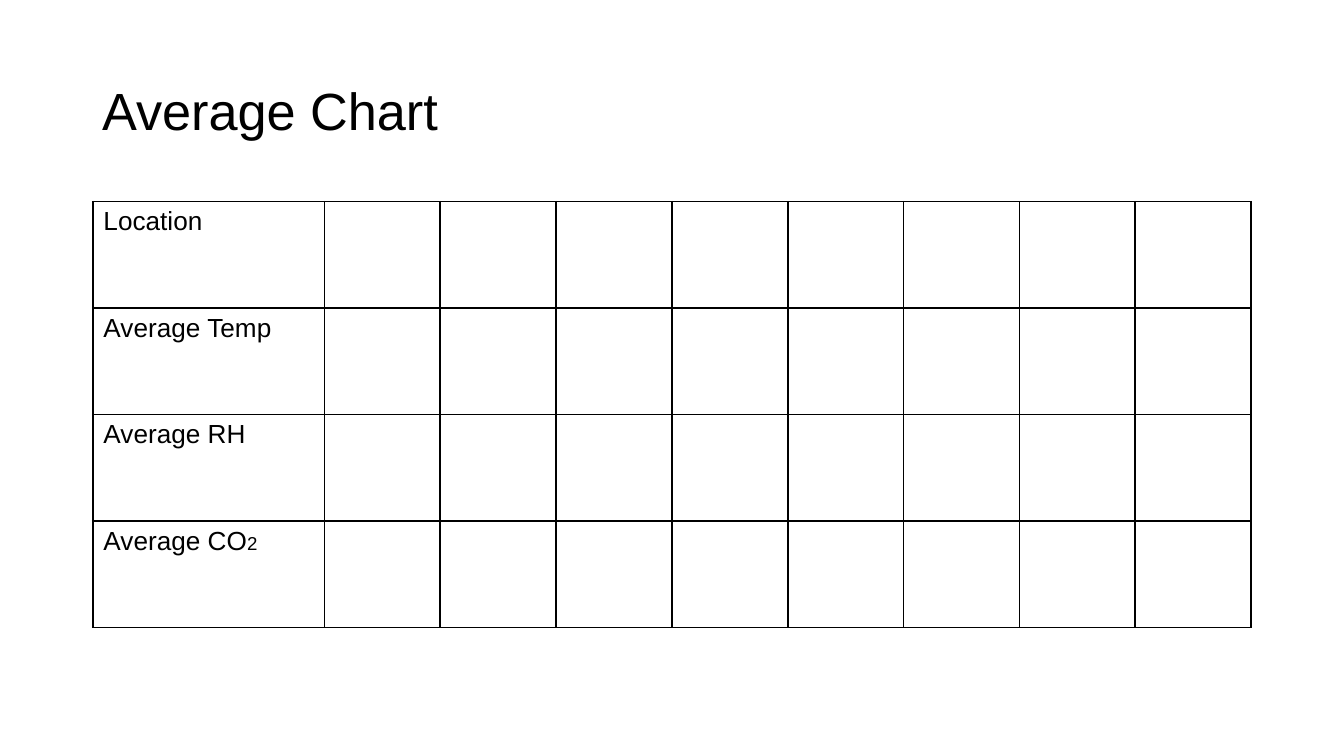
"""Build the Average Chart slide: a title above an empty table of readings."""
from lxml import etree
from pptx import Presentation
from pptx.dml.color import RGBColor
from pptx.enum.text import MSO_ANCHOR
from pptx.oxml.ns import qn
from pptx.util import Inches, Pt

MIDDLE = MSO_ANCHOR.MIDDLE
COLORS = {"ink": "000000", "paper": "FFFFFF"}
FONT = "Arial"
ROW_LABELS = [
    [("Location", 14)],
    [("Average Temp", 14)],
    [("Average RH", 14)],
    [("Average CO", 14), ("2", 10)],
]
COLUMN_SHARES = [2] + [1] * 8
LEFT, WIDTH = Inches(0.69), Inches(8.62)
TABLE_HEIGHT = Inches(3.17)


def add_run(paragraph, text, size):
    run = paragraph.add_run()
    run.text = text
    run.font.name = FONT
    run.font.size = Pt(size)
    run.font.color.rgb = RGBColor.from_string(COLORS["ink"])


def add_borders(cell):
    properties = cell._tc.get_or_add_tcPr()
    for position, side in enumerate(("a:lnL", "a:lnR", "a:lnT", "a:lnB")):
        border = etree.Element(qn(side), w=str(Pt(1)))
        fill = etree.SubElement(border, qn("a:solidFill"))
        etree.SubElement(fill, qn("a:srgbClr"), val=COLORS["ink"])
        properties.insert(position, border)


prs = Presentation()
prs.slide_width = Inches(10)
prs.slide_height = Inches(10 * 9 / 16)
slide = prs.slides.add_slide(prs.slide_layouts[6])
slide.background.fill.solid()
slide.background.fill.fore_color.rgb = RGBColor.from_string(COLORS["paper"])

title = slide.shapes.add_textbox(LEFT, Inches(0.3), WIDTH, Inches(1.09)).text_frame
title.word_wrap = True
title.vertical_anchor = MIDDLE
title.margin_left = title.margin_right = Inches(0.07)
title.margin_top = title.margin_bottom = Inches(0.04)
title.paragraphs[0].line_spacing = 0.9
add_run(title.paragraphs[0], "Average Chart", 28)

averages = slide.shapes.add_table(
    len(ROW_LABELS), len(COLUMN_SHARES), LEFT, Inches(1.5), WIDTH, TABLE_HEIGHT
).table
averages.first_row = False
averages.horz_banding = False
for column, share in zip(averages.columns, COLUMN_SHARES):
    column.width = WIDTH * share // sum(COLUMN_SHARES)

for row, label in zip(averages.rows, ROW_LABELS):
    row.height = TABLE_HEIGHT // len(ROW_LABELS)
    for cell in row.cells:
        cell.margin_left = cell.margin_right = Inches(0.08)
        cell.margin_top = cell.margin_bottom = Inches(0.04)
        cell.fill.background()
        add_borders(cell)
    for text, size in label:
        add_run(row.cells[0].text_frame.paragraphs[0], text, size)

prs.save("out.pptx")
